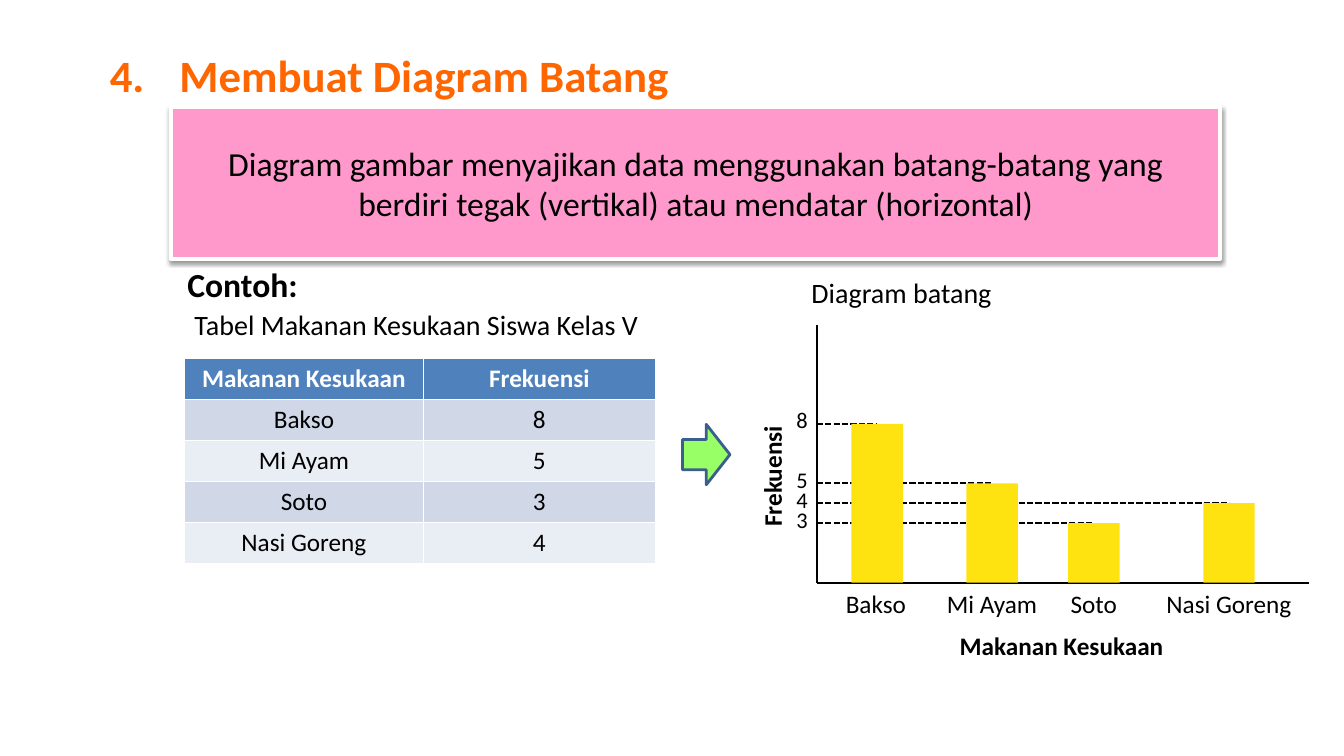
"""Build the slide on drawing a bar chart from a frequency table."""
from lxml import etree
from pptx import Presentation
from pptx import util as u
from pptx.dml.color import RGBColor
from pptx.enum import dml, shapes, text
from pptx.oxml import ns

presentation = Presentation()
presentation.slide_width = u.Inches(13.33)
presentation.slide_height = u.Inches(7.5)
slide = presentation.slides.add_slide(presentation.slide_layouts[6])
COLUMN = presentation.slide_width / 133.3
ROW = presentation.slide_height / 75


def box(left, top, width, height):
    """Turn grid columns and rows into lengths."""
    return [round(n * unit) for n, unit in zip((left, top, width, height), (COLUMN, ROW) * 2)]


def write(frame, words, size, colour="000000", bold=False, align="LEFT", tabs=()):
    """Fill a text frame with one formatted paragraph."""
    frame.text = words
    paragraph = frame.paragraphs[0]
    paragraph.alignment = getattr(text.PP_ALIGN, align)
    if tabs:
        tab_list = etree.SubElement(paragraph._p.get_or_add_pPr(), ns.qn("a:tabLst"))
        for position, kind in tabs:
            etree.SubElement(tab_list, ns.qn("a:tab"), pos=str(round(position * COLUMN)), algn=kind)
    for run in paragraph.runs:
        run.font.size = u.Pt(size)
        run.font.name = "Calibri"
        run.font.bold = bold
        run.font.color.rgb = RGBColor.from_string(colour)


foods = {"Bakso": 8, "Mi Ayam": 5, "Soto": 3, "Nasi Goreng": 4}
bar_centres = [87, 98.4, 108.5, 121.9]
bar_width = 5.1
axis_left, axis_top, axis_right, baseline = 81, 32.2, 129.8, 57.8
unit_height = 1.97
labels_left = 82.9
tops = [baseline - value * unit_height for value in foods.values()]

banner = (17, 10.6, 104, 15.1)
arrow = (67.7, 42.1, 4.7, 6)
for kind, area, fill, line, weight in [
    ("RECTANGLE", banner, "FF99CC", "FFFFFF", 3),
    ("RIGHT_ARROW", arrow, "99FF66", "3A5F8C", 2),
]:
    shape = slide.shapes.add_shape(getattr(shapes.MSO_SHAPE, kind), *box(*area))
    shape.shadow.inherit = False
    shape.fill.solid()
    shape.fill.fore_color.rgb = RGBColor.from_string(fill)
    shape.line.color.rgb = RGBColor.from_string(line)
    shape.line.width = u.Pt(weight)
    if area == banner:
        frame = shape.text_frame
        frame.word_wrap = True
        frame.vertical_anchor = text.MSO_ANCHOR.MIDDLE
        write(frame, "Diagram gambar menyajikan data menggunakan batang-batang yang "
              "berdiri tegak (vertikal) atau mendatar (horizontal)", 24, align="CENTER")
        effects = shape._element.spPr.find(ns.qn("a:effectLst"))
        shadow = etree.SubElement(effects, ns.qn("a:outerShdw"), blurRad=str(u.Pt(3.1)),
                                  dist=str(u.Pt(1.6)), dir="5400000", rotWithShape="0")
        black = etree.SubElement(shadow, ns.qn("a:srgbClr"), val="000000")
        etree.SubElement(black, ns.qn("a:alpha"), val="38000")

table = slide.shapes.add_table(len(foods) + 1, 2, *box(18.3, 35.6, 46.7, 20.3)).table
table.columns[0].width = u.Inches(2.37)
table.columns[1].width = u.Inches(2.3)
for row, values in enumerate([("Makanan Kesukaan", "Frekuensi"), *foods.items()]):
    for column, value in enumerate(values):
        cell = table.cell(row, column)
        cell.vertical_anchor = text.MSO_ANCHOR.MIDDLE
        cell.fill.solid()
        fill = "4F81BD" if row == 0 else ("E9EDF4", "D0D8E8")[row % 2]
        cell.fill.fore_color.rgb = RGBColor.from_string(fill)
        write(cell.text_frame, str(value), 18, "000000" if row else "FFFFFF", row == 0, "CENTER")

guides = [(axis_left, top, centre, top, True) for centre, top in zip(bar_centres, tops)]
axes = [(axis_left, axis_top, axis_left, baseline, False),
        (axis_left, baseline, axis_right, baseline, False)]
for *ends, dashed in guides + axes:
    connector = slide.shapes.add_connector(shapes.MSO_CONNECTOR.STRAIGHT, *box(*ends))
    connector.line.color.rgb = RGBColor.from_string("000000")
    connector.line.width = u.Pt(1.5)
    if dashed:
        connector.line.dash_style = dml.MSO_LINE.SQUARE_DOT
    etree.SubElement(connector._element.spPr, ns.qn("a:effectLst"))

for centre, top in zip(bar_centres, tops):
    bar = slide.shapes.add_shape(shapes.MSO_SHAPE.RECTANGLE, *box(
        centre - bar_width / 2, top, bar_width, baseline - top))
    bar.shadow.inherit = False
    bar.fill.solid()
    bar.fill.fore_color.rgb = RGBColor.from_string("FFE311")
    bar.line.fill.background()

label_tabs = [(centre - labels_left - 1, "ctr") for centre in bar_centres[1:]]
captions = [
    ((9.9, 4.2, 57.9, 6.4), "4.\tMembuat Diagram Batang", 32, "FF6600", True, [(6.9, "l")], 0),
    ((17.6, 25.7, 13.1, 5), "Contoh:", 24, "000000", True, (), 0),
    ((18.3, 30, 47.1, 4.4), "Tabel Makanan Kesukaan Siswa Kelas V", 20, "000000", False, (), 0),
    ((79.5, 26.8, 20, 4.4), "Diagram batang", 20, "000000", False, (), 0),
    ((70.5, 45.2, 12.1, 4), "Frekuensi", 18, "000000", True, (), 270),
    ((94.2, 62, 22.4, 4), "Makanan Kesukaan", 18, "000000", True, (), 0),
    ((labels_left, 57.9, 47.2, 4), "\t".join(foods), 18, "000000", False, label_tabs, 0),
]
for value, top in zip(foods.values(), tops):
    captions.append(((78, top - 2.2, 3.2, 3.7), str(value), 16, "000000", False, (), 0))
for area, words, size, colour, bold, tabs, turn in captions:
    caption = slide.shapes.add_textbox(*box(*area))
    caption.rotation = turn
    caption.text_frame.word_wrap = bool(tabs)
    write(caption.text_frame, words, size, colour, bold, tabs=tabs)
    if not tabs and "\n" not in words:
        caption.text_frame.auto_size = text.MSO_AUTO_SIZE.SHAPE_TO_FIT_TEXT

presentation.save("out.pptx")
